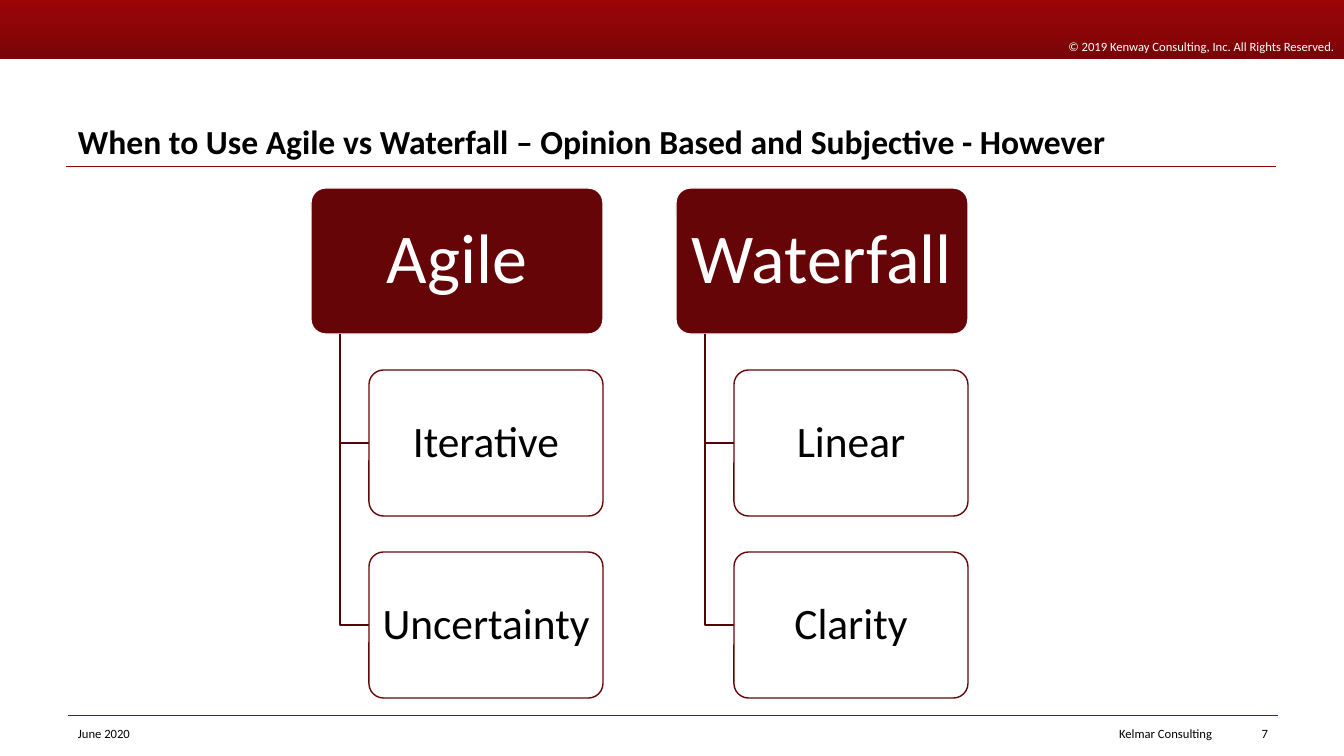
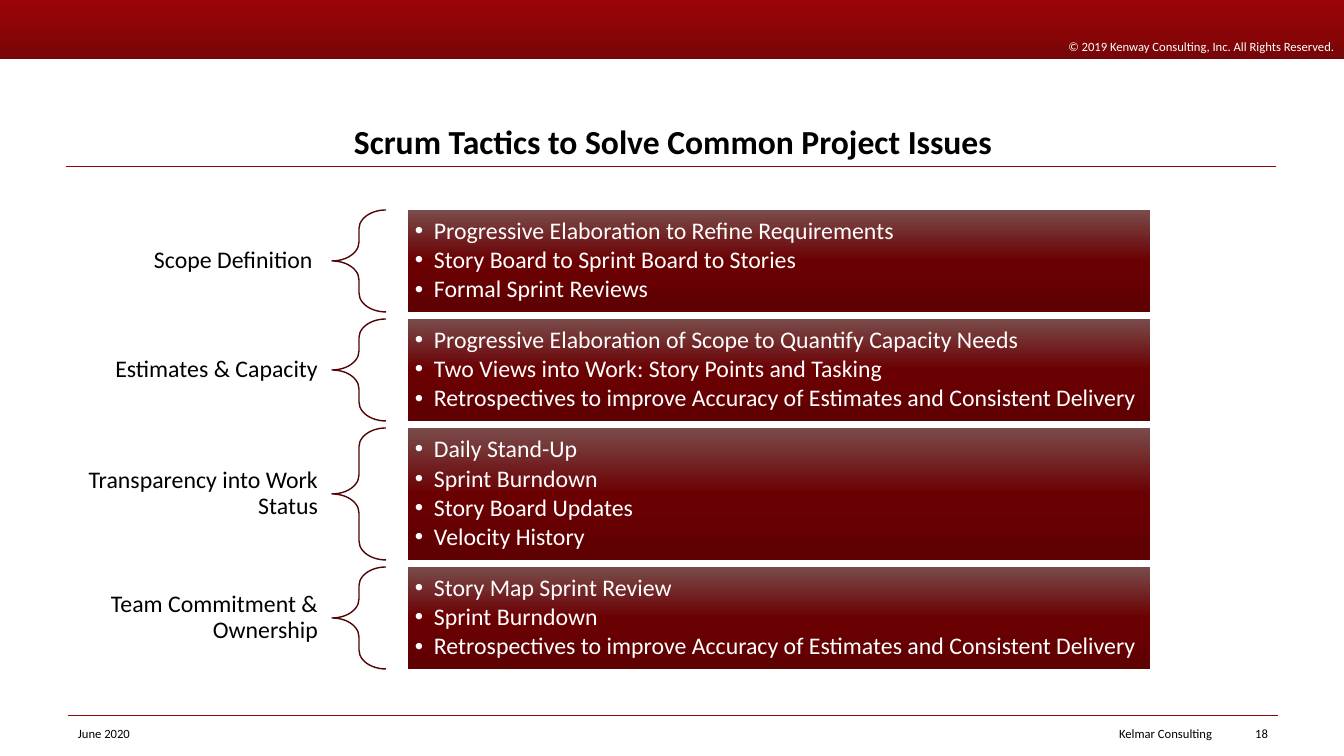
"""Build two slides: Agile versus Waterfall, and Scrum tactics for project issues."""
from lxml import etree
from pptx import Presentation
from pptx.dml.color import RGBColor
from pptx.enum.shapes import MSO_CONNECTOR, MSO_SHAPE
from pptx.enum.text import MSO_ANCHOR, MSO_AUTO_SIZE, PP_ALIGN
from pptx.oxml.ns import qn
from pptx.util import Pt

PX = 9071
WIDTH, HEIGHT = 1344, 756
TITLE_ONLY = 5
FONT = "Calibri"
LEFT, CENTER, RIGHT = PP_ALIGN.LEFT, PP_ALIGN.CENTER, PP_ALIGN.RIGHT
MIDDLE, BOTTOM = MSO_ANCHOR.MIDDLE, MSO_ANCHOR.BOTTOM
RECTANGLE, ROUNDED, BRACE = MSO_SHAPE.RECTANGLE, MSO_SHAPE.ROUNDED_RECTANGLE, MSO_SHAPE.LEFT_BRACE
STRAIGHT = MSO_CONNECTOR.STRAIGHT

WHITE, BLACK = "FFFFFF", "000000"
MAROON, DARK_MAROON, RULE_RED = "660507", "520406", "900507"
BAND_STOPS = [(0, "9B0507"), (35, "900507"), (65, "870507"), (91, "780507")]
BAR_STOPS = [(0, "7A4B4B"), (50, "6B0002"), (100, "5F0002")]

PAGES = [(7, "When to Use Agile vs Waterfall – Opinion Based and Subjective - However", LEFT),
         (18, "Scrum Tactics to Solve Common Project Issues", CENTER)]
METHODS = [("Agile", ["Iterative", "Uncertainty"]), ("Waterfall", ["Linear", "Clarity"])]
TACTICS = [
    ("Scope Definition ", [
        "Progressive Elaboration to Refine Requirements",
        "Story Board to Sprint Board to Stories",
        "Formal Sprint Reviews"]),
    ("Estimates & Capacity", [
        "Progressive Elaboration of Scope to Quantify Capacity Needs",
        "Two Views into Work: Story Points and Tasking",
        "Retrospectives to improve Accuracy of Estimates and Consistent Delivery"]),
    ("Transparency into Work Status", [
        "Daily Stand-Up", "Sprint Burndown", "Story Board Updates", "Velocity History"]),
    ("Team Commitment & Ownership", [
        "Story Map Sprint Review",
        "Sprint Burndown",
        "Retrospectives to improve Accuracy of Estimates and Consistent Delivery"]),
]


def write(box, text, size=9, color=BLACK, bold=False, align=LEFT, anchor=MIDDLE,
          inset=(10, 5), spacing=1.0, after=0, bullet=None):
    """Fill a box with text, one paragraph per line."""
    frame = box.text_frame
    frame.word_wrap = True
    frame.auto_size = MSO_AUTO_SIZE.NONE
    frame.vertical_anchor = anchor
    frame.margin_left = frame.margin_right = inset[0] * PX
    frame.margin_top = frame.margin_bottom = inset[1] * PX
    for index, line in enumerate(text.split("\n")):
        para = frame.add_paragraph() if index else frame.paragraphs[0]
        if bullet:
            properties = para._p.get_or_add_pPr()
            properties.set("marL", str(19 * PX))
            properties.set("indent", str(-19 * PX))
            etree.SubElement(properties, qn("a:buFont")).set("typeface", "Arial")
            etree.SubElement(properties, qn("a:buChar")).set("char", bullet)
        para.alignment = align
        para.line_spacing = spacing
        para.space_after = Pt(after)
        span = para.add_run()
        span.text = line
        span.font.name = FONT
        span.font.size = Pt(size)
        span.font.bold = bold
        span.font.color.rgb = RGBColor.from_string(color)


def style(shape, fill=None, line=None, adjustments=()):
    """Give a shape a solid, graded or empty fill, and an outline."""
    shape.shadow.inherit = False
    if isinstance(fill, list):
        shape.fill.gradient()
        shape.fill.gradient_angle = 270
        stops = shape._element.spPr.find(qn("a:gradFill")).find(qn("a:gsLst"))
        stops.clear()
        for position, color in fill:
            stop = etree.SubElement(stops, qn("a:gs"), pos=str(position * 1000))
            etree.SubElement(stop, qn("a:srgbClr"), val=color)
    elif fill:
        shape.fill.solid()
        shape.fill.fore_color.rgb = RGBColor.from_string(fill)
    else:
        shape.fill.background()
    if line:
        shape.line.color.rgb = RGBColor.from_string(line)
        shape.line.width = Pt(1)
    else:
        shape.line.fill.background()
    for index, value in enumerate(adjustments):
        shape.adjustments[index] = value
    return shape


deck = Presentation()
deck.slide_width, deck.slide_height = WIDTH * PX, HEIGHT * PX

for number, heading, heading_align in PAGES:
    page = deck.slides.add_slide(deck.slide_layouts[TITLE_ONLY])
    band = style(page.shapes.add_shape(RECTANGLE, 0, 0, WIDTH * PX, 59 * PX), BAND_STOPS)
    write(band, "© 2019 Kenway Consulting, Inc. All Rights Reserved.",
          color=WHITE, align=RIGHT, anchor=BOTTOM)

    for left, top in [(66, 166), (68, 715)]:
        rule = page.shapes.add_connector(
            STRAIGHT, left * PX, top * PX, (left + 1210) * PX, top * PX)
        rule.line.color.rgb = RGBColor.from_string(RULE_RED)
        rule.line.width = Pt(0.5)
        etree.SubElement(rule._element.spPr, qn("a:effectLst"))

    title = page.shapes.title
    title.left, title.top, title.width, title.height = 68 * PX, 88 * PX, 1210 * PX, 79 * PX
    write(title, heading, size=24, bold=True, align=heading_align, anchor=BOTTOM, spacing=0.9)

    for left, width, text, align in [(68, 302, "June 2020", LEFT),
                                     (768, 454, "Kelmar Consulting", RIGHT),
                                     (1223, 55, str(number), RIGHT)]:
        footer = page.shapes.add_textbox(left * PX, 719 * PX, width * PX, 28 * PX)
        write(footer, text, align=align)

comparison, tactics = deck.slides

box_height, row_step, head_top = 146, 182, 188
for column, (method, traits) in enumerate(METHODS):
    left = 311 + 365 * column
    head = comparison.shapes.add_shape(
        ROUNDED, left * PX, head_top * PX, 292 * PX, box_height * PX)
    write(style(head, MAROON, WHITE, [0.1]), method, size=50, color=WHITE,
          align=CENTER, inset=(5, 5), spacing=0.9)
    for row, trait in enumerate(traits, 1):
        top = head_top + row_step * row
        middle = top + box_height // 2
        branch = comparison.shapes.build_freeform(left + 29, head_top + box_height, PX)
        branch.add_line_segments([(left + 29, middle), (left + 58, middle)], close=False)
        style(branch.convert_to_shape(), line=DARK_MAROON)
        card = comparison.shapes.add_shape(
            ROUNDED, (left + 58) * PX, top * PX, 234 * PX, box_height * PX)
        write(style(card, WHITE, MAROON, [0.1]), trait, size=31,
              align=CENTER, inset=(4, 4), spacing=0.9)

top = 210
for issue, remedies in TACTICS:
    height = 12 + 30 * len(remedies)
    label = tactics.shapes.add_textbox(58 * PX, top * PX, 273 * PX, height * PX)
    write(label, issue, size=17, align=RIGHT, inset=(13, 5), spacing=0.9)
    brace = tactics.shapes.add_shape(BRACE, 332 * PX, top * PX, 54 * PX, height * PX)
    style(brace, line=DARK_MAROON, adjustments=[0.35, 0.5])
    bar = tactics.shapes.add_shape(RECTANGLE, 408 * PX, top * PX, 742 * PX, height * PX)
    write(style(bar, BAR_STOPS), "\n".join(remedies), size=17, color=WHITE,
          inset=(7, 7), spacing=0.9, after=2.55, bullet="•")
    top += height + 7

deck.save("out.pptx")
